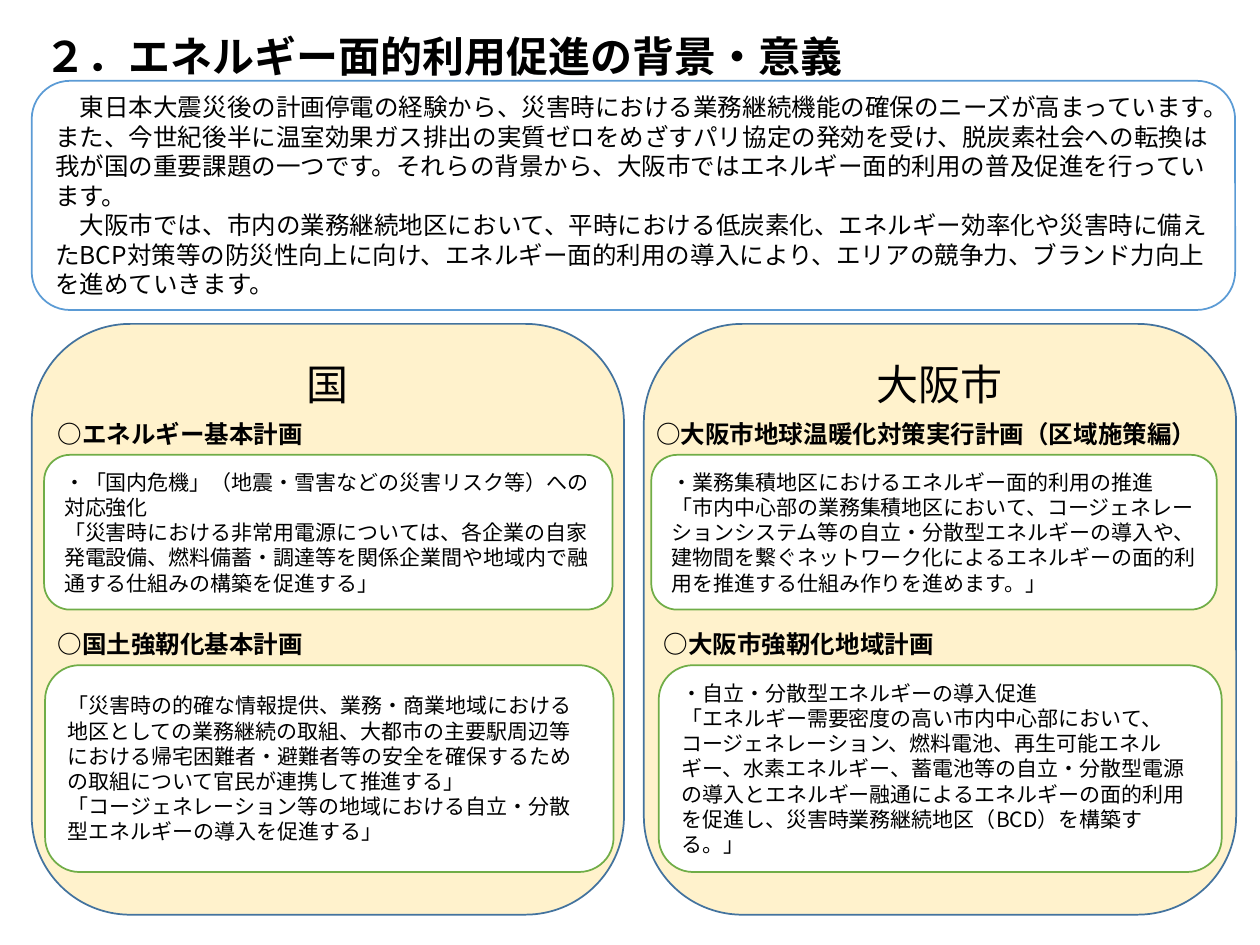
import pptx
import pptx.util
import pptx.dml.color
import pptx.enum.lang
import pptx.enum.shapes
import pptx.enum.text
import pptx.oxml.ns
import lxml.etree
from dataclasses import dataclass

Cm = pptx.util.Cm
Pt = pptx.util.Pt
ALIGN = pptx.enum.text.PP_ALIGN
ANCHOR = pptx.enum.text.MSO_ANCHOR


@dataclass
class Theme:
    font: str = "Noto Sans CJK JP"
    ink: str = "000000"
    white: str = "FFFFFF"
    cream: str = "FFF2CC"
    navy: str = "43739E"
    green: str = "70AD47"
    blue: str = "5B9BD5"
    title: int = 24
    head: int = 14
    body: int = 12
    line: int = 1


class Deck:
    def __init__(self, theme):
        self.theme = theme
        self.deck = pptx.Presentation()
        self.deck.slide_width = Cm(25.4)
        self.deck.slide_height = Cm(19.05)
        self.slide = self.deck.slides.add_slide(self.deck.slide_layouts[5])

    def color(self, name):
        return pptx.dml.color.RGBColor.from_string(name)

    def fill_text(self, frame, lines, size, bold=False, align=ALIGN.LEFT):
        for i, line in enumerate(lines):
            para = frame.paragraphs[0] if i == 0 else frame.add_paragraph()
            para.alignment = align
            run = para.add_run()
            run.text = line
            font = run.font
            font.name = self.theme.font
            font.size = Pt(size)
            font.bold = bold
            font.color.rgb = self.color(self.theme.ink)
            font.language_id = pptx.enum.lang.MSO_LANGUAGE_ID.JAPANESE
            # East Asian glyphs take their own typeface
            east = lxml.etree.SubElement(run._r.rPr, pptx.oxml.ns.qn("a:ea"))
            east.set("typeface", self.theme.font)

    def title(self, box, text):
        shape = self.slide.shapes.title
        shape.left, shape.top, shape.width, shape.height = map(Cm, box)
        frame = shape.text_frame
        frame.word_wrap = True
        frame.auto_size = pptx.enum.text.MSO_AUTO_SIZE.NONE
        frame.vertical_anchor = ANCHOR.MIDDLE
        self.fill_text(frame, [text], self.theme.title, bold=True)
        frame.paragraphs[0].line_spacing = 0.9

    def card(self, box, fill, edge, lines, size,
             align=ALIGN.LEFT, anchor=ANCHOR.MIDDLE):
        kind = pptx.enum.shapes.MSO_SHAPE.ROUNDED_RECTANGLE
        shape = self.slide.shapes.add_shape(kind, *map(Cm, box))
        shape.shadow.inherit = False
        shape.fill.solid()
        shape.fill.fore_color.rgb = self.color(fill)
        shape.line.color.rgb = self.color(edge)
        shape.line.width = Pt(self.theme.line)
        frame = shape.text_frame
        frame.word_wrap = True
        frame.vertical_anchor = anchor
        self.fill_text(frame, lines, size, align=align)

    def label(self, box, text):
        frame = self.slide.shapes.add_textbox(*map(Cm, box)).text_frame
        frame.word_wrap = False
        frame.auto_size = pptx.enum.text.MSO_AUTO_SIZE.SHAPE_TO_FIT_TEXT
        self.fill_text(frame, [text], self.theme.head, bold=True)


INTRO = [
    "　東日本大震災後の計画停電の経験から、災害時における業務継続機能の確保のニーズが高まっています。",
    "また、今世紀後半に温室効果ガス排出の実質ゼロをめざすパリ協定の発効を受け、脱炭素社会への転換は我が国の重要課題の一つです。それらの背景から、大阪市ではエネルギー面的利用の普及促進を行っています。",
    "　大阪市では、市内の業務継続地区において、平時における低炭素化、エネルギー効率化や災害時に備えたBCP対策等の防災性向上に向け、エネルギー面的利用の導入により、エリアの競争力、ブランド力向上を進めていきます。",
]

# Panel: left edge, name, plans; plan: label (left, width, text), card (left, width, lines)
PANELS = [
    (0.64, "国", [
        ((0.91, 5.51, "○エネルギー基本計画"),
         (0.89, 11.46, [
             "・「国内危機」（地震・雪害などの災害リスク等）への対応強化",
             "「災害時における非常用電源については、各企業の自家発電設備、燃料備蓄・調達等を関係企業間や地域内で融通する仕組みの構築を促進する」",
         ])),
        ((0.91, 5.51, "○国土強靭化基本計画"),
         (0.91, 11.46, [
             "「災害時の的確な情報提供、業務・商業地域における地区としての業務継続の取組、大都市の主要駅周辺等における帰宅困難者・避難者等の安全を確保するための取組について官民が連携して推進する」",
             "「コージェネレーション等の地域における自立・分散型エネルギーの導入を促進する」",
         ])),
    ]),
    (12.98, "大阪市", [
        ((12.98, 11.48, "○大阪市地球温暖化対策実行計画（区域施策編）"),
         (13.13, 11.4, [
             "・業務集積地区におけるエネルギー面的利用の推進",
             "「市内中心部の業務集積地区において、コージェネレーションシステム等の自立・分散型エネルギーの導入や、建物間を繋ぐネットワーク化によるエネルギーの面的利用を推進する仕組み作りを進めます。」",
         ])),
        ((13.13, 5.99, "○大阪市強靭化地域計画"),
         (13.28, 11.35, [
             "・自立・分散型エネルギーの導入促進",
             "「エネルギー需要密度の高い市内中心部において、コージェネレーション、燃料電池、再生可能エネルギー、水素エネルギー、蓄電池等の自立・分散型電源の導入とエネルギー融通によるエネルギーの面的利用を促進し、災害時業務継続地区（BCD）を構築する。」",
         ])),
    ]),
]

# Rows shared by both panels: label top, card top, card height
ROWS = [(8.32, 9.17, 3.12), (12.55, 13.41, 4.17)]


def main():
    theme = Theme()
    deck = Deck(theme)

    # Title and introduction
    deck.title((0.64, 0.46, 21.89, 1.45), "２．エネルギー面的利用促進の背景・意義")
    deck.card((0.64, 1.63, 24.26, 4.62), theme.white, theme.blue, INTRO, theme.head)

    # Nation and city panels with their plans
    for left, name, plans in PANELS:
        deck.card((left, 6.53, 11.94, 11.91), theme.cream, theme.navy, [name],
                  theme.title, ALIGN.CENTER, ANCHOR.TOP)
        for (head, card), (top, low, high) in zip(plans, ROWS):
            x, wide, text = head
            deck.label((x, top, wide, 0.86), text)
            x, wide, lines = card
            deck.card((x, low, wide, high), theme.white, theme.green,
                      lines, theme.body)

    deck.deck.save("out.pptx")


if __name__ == "__main__":
    main()
